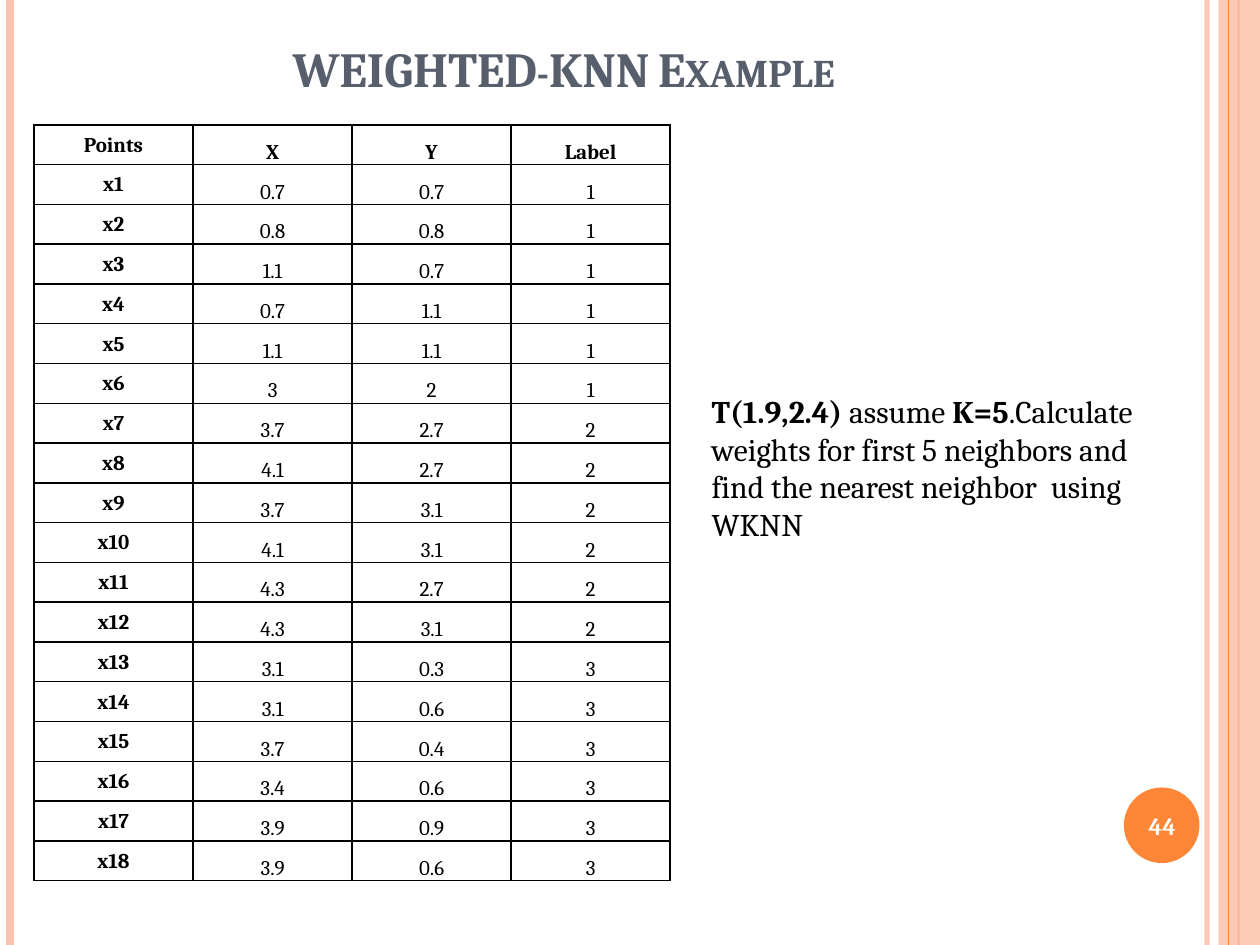
from lxml import etree
from pptx import Presentation
from pptx.dml.color import RGBColor
from pptx.enum import shapes, text
from pptx.oxml import parse_xml
from pptx.oxml.ns import nsdecls, qn
from pptx.util import Inches, Pt

PEACH, ORANGE, BLACK, WHITE = "FEC3AE", "FE8637", "000000", "FFFFFF"


def paint(target, color, alpha=100):
    """Give a fill a solid colour, with alpha in percent."""
    target.solid()
    target.fore_color.rgb = RGBColor.from_string(color)
    if alpha < 100:
        clr = target._xPr.find(qn("a:solidFill"))[0]
        etree.SubElement(clr, qn("a:alpha"), val=str(alpha * 1000))


def style(p, size, color, bold=None, align=text.PP_ALIGN.CENTER):
    p.alignment = align
    p.font.name = "Cambria"
    p.font.size = Pt(size)
    p.font.bold = bold
    paint(p.font.fill, color)


prs = Presentation()
prs.slide_width, prs.slide_height = Inches(10), Inches(7.5)
s = prs.slides.add_slide(prs.slide_layouts[6])

# Side stripes and the page number disc
for x, color, width, alpha in [(9.58, PEACH, 3, 93), (0.08, PEACH, 4.5, 100),
                               (9.83, ORANGE, 1.5, 100), (9.75, ORANGE, 0.75, 100)]:
    line = s.shapes.add_connector(shapes.MSO_CONNECTOR.STRAIGHT,
                                  Inches(x), 0, Inches(x), prs.slide_height)
    line.line.width = Pt(width)
    paint(line.line.fill, color, alpha)
    etree.SubElement(line._element.spPr, qn("a:effectLst"))

for kind, x, y, w, h, color, alpha in [
        (shapes.MSO_SHAPE.RECTANGLE, 9.67, 0, 0.33, 7.5, PEACH, 87),
        (shapes.MSO_SHAPE.OVAL, 8.92, 6.25, 0.6, 0.6, ORANGE, 100)]:
    sp = s.shapes.add_shape(kind, Inches(x), Inches(y), Inches(w), Inches(h))
    sp.shadow.inherit = False
    sp.line.fill.background()
    paint(sp.fill, color, alpha)
    if kind == shapes.MSO_SHAPE.RECTANGLE:
        # The thin line at 9.75 lies over the band
        s.shapes._spTree.remove(line._element)
        s.shapes._spTree.append(line._element)

# Title and page number
for words, x, y, w, h, size, color, anchor in [
        ("WEIGHTED-KNN Example", 0.39, 0.1, 8.17, 0.72, 28, "575F6D", text.MSO_ANCHOR.BOTTOM),
        ("44", 8.89, 6.27, 0.67, 0.57, 14, WHITE, text.MSO_ANCHOR.MIDDLE)]:
    tf = s.shapes.add_textbox(Inches(x), Inches(y), Inches(w), Inches(h)).text_frame
    tf.word_wrap = True
    tf.vertical_anchor = anchor
    p = tf.paragraphs[0]
    r = p.add_run()
    r.text = words
    style(p, size, color, True)
    if size == 28:
        r.font._element.set("cap", "small")

# Table of labelled points
points = [("0.7", "0.7", "1"), ("0.8", "0.8", "1"), ("1.1", "0.7", "1"),
          ("0.7", "1.1", "1"), ("1.1", "1.1", "1"), ("3", "2", "1"),
          ("3.7", "2.7", "2"), ("4.1", "2.7", "2"), ("3.7", "3.1", "2"),
          ("4.1", "3.1", "2"), ("4.3", "2.7", "2"), ("4.3", "3.1", "2"),
          ("3.1", "0.3", "3"), ("3.1", "0.6", "3"), ("3.7", "0.4", "3"),
          ("3.4", "0.6", "3"), ("3.9", "0.9", "3"), ("3.9", "0.6", "3")]
rows = [("Points", "X", "Y", "Label")]
rows += [(f"x{i}", *point) for i, point in enumerate(points, 1)]

table = s.shapes.add_table(len(rows), 4, Inches(0.27), Inches(0.99),
                           Inches(5.05), Inches(6)).table
table.first_row = table.horz_banding = False
for i, row in enumerate(rows):
    for j, value in enumerate(row):
        cell = table.cell(i, j)
        cell.text = value
        cell.margin_left = cell.margin_right = cell.margin_top = Inches(0.01)
        cell.margin_bottom = 0
        cell.vertical_anchor = text.MSO_ANCHOR.BOTTOM if j else text.MSO_ANCHOR.MIDDLE
        style(cell.text_frame.paragraphs[0], 12, BLACK, i == 0 or j == 0)
        cell.fill.background()
        tcPr = cell._tc.get_or_add_tcPr()
        for k, side in enumerate("LRTB"):
            tcPr.insert(k, parse_xml(
                f'<a:ln{side} {nsdecls("a")} w="12700"><a:solidFill>'
                f'<a:srgbClr val="{BLACK}"/></a:solidFill></a:ln{side}>'))

# Task
tf = s.shapes.add_textbox(Inches(5.55), Inches(3.06), Inches(3.87), Inches(1.31)).text_frame
tf.word_wrap = True
p = tf.paragraphs[0]
style(p, 18, BLACK, align=text.PP_ALIGN.LEFT)
for words, bold in [("T(1.9,2.4) ", True), ("assume ", False), ("K=5", True),
                    (".Calculate weights for first 5 neighbors and find the "
                     "nearest neighbor  using WKNN", False)]:
    r = p.add_run()
    r.text = words
    r.font.bold = bold

prs.save("out.pptx")
